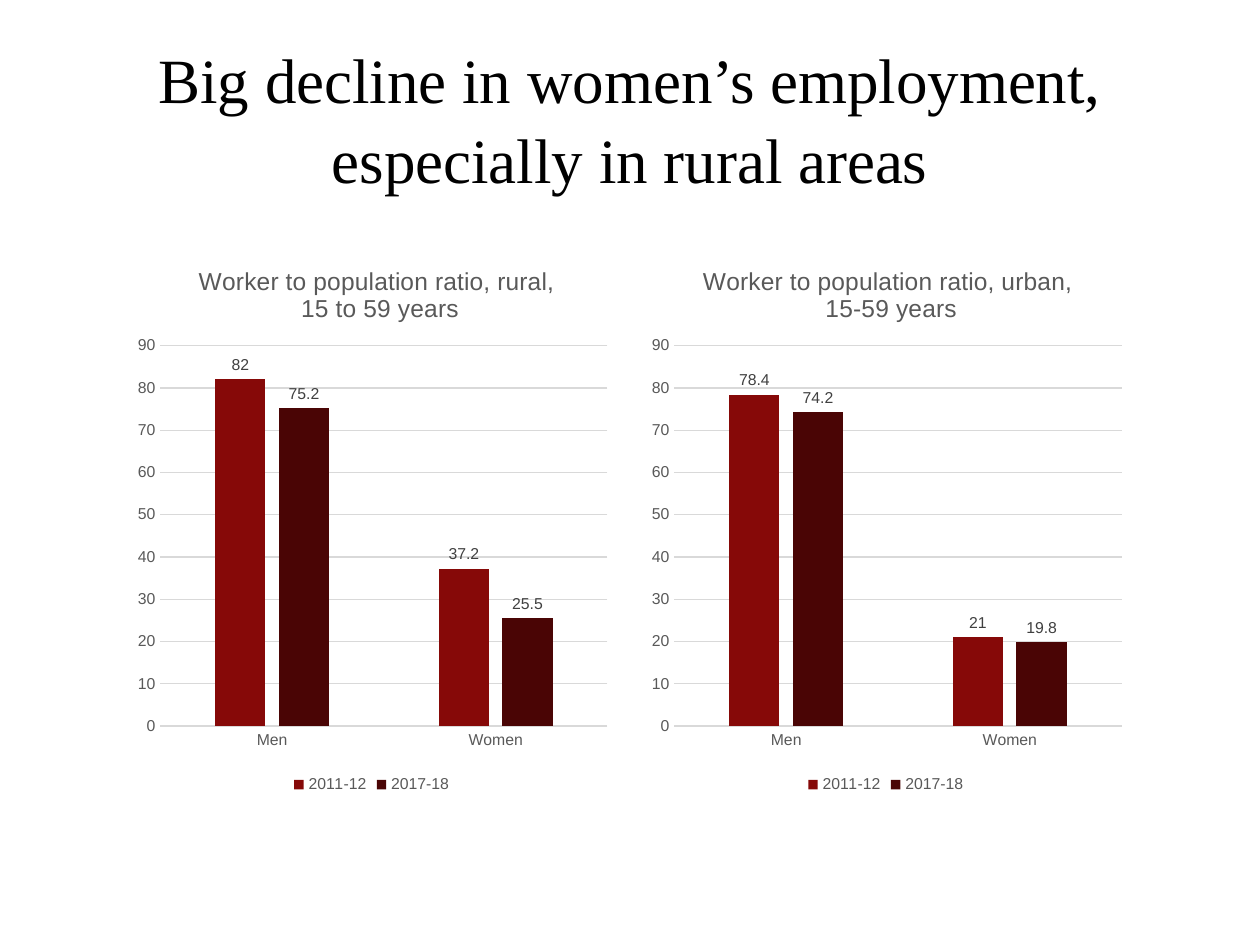
from lxml import etree
from pptx import Presentation
from pptx.chart.data import CategoryChartData
from pptx.dml.color import RGBColor
from pptx.enum.chart import XL_CHART_TYPE, XL_LABEL_POSITION, XL_LEGEND_POSITION, XL_TICK_MARK
from pptx.enum.text import MSO_ANCHOR, PP_ALIGN
from pptx.oxml.ns import qn
from pptx.util import Inches, Pt

COLUMNS = XL_CHART_TYPE.COLUMN_CLUSTERED
OUTSIDE_END = XL_LABEL_POSITION.OUTSIDE_END
BOTTOM = XL_LEGEND_POSITION.BOTTOM
NO_TICK = XL_TICK_MARK.NONE
MIDDLE = MSO_ANCHOR.MIDDLE
CENTER = PP_ALIGN.CENTER

COLORS = {"black": "000000", "gray": "595959", "label": "404040",
          "grid": "D9D9D9", "2011-12": "860908", "2017-18": "4A0505"}
CATEGORIES = ["Men", "Women"]

# Title lines, title left (share of chart width), values by year
CHARTS = [
    (["Worker to population ratio, rural, ", "15 to 59 years"], 0.14,
     {"2011-12": [82, 37.2], "2017-18": [75.2, 25.5]}),
    (["Worker to population ratio, urban, ", "15-59 years"], 0.12,
     {"2011-12": [78.4, 21], "2017-18": [74.2, 19.8]}),
]


def rgb(name):
    return RGBColor.from_string(COLORS[name])


def style_font(font, size, color, name="Arial"):
    font.size, font.name, font.bold = Pt(size), name, False
    font.color.rgb = rgb(color)


def add_text(slide, text, left, top, width, height, *, size, font, color):
    tf = slide.shapes.add_textbox(Inches(left), Inches(top), Inches(width), Inches(height)).text_frame
    tf.word_wrap = True
    tf.vertical_anchor = MIDDLE
    tf.margin_left = tf.margin_right = Inches(0.05)
    p = tf.paragraphs[0]
    p.alignment = CENTER
    p.line_spacing = 1.05
    r = p.add_run()
    r.text = text
    style_font(r.font, size, color, font)


def set_layout(parent, before, **position):
    """Place a chart part by shares of the chart size."""
    for old in parent.findall(qn("c:layout")):
        parent.remove(old)
    layout = etree.Element(qn("c:layout"))
    manual = etree.SubElement(layout, qn("c:manualLayout"))
    if "w" in position:
        etree.SubElement(manual, qn("c:layoutTarget")).set("val", "inner")
    for key in ("x", "y"):
        etree.SubElement(manual, qn(f"c:{key}Mode")).set("val", "edge")
    for key, value in position.items():
        etree.SubElement(manual, qn(f"c:{key}")).set("val", str(value))
    parent.insert(before, layout)


def add_title(chart, lines, left):
    title = chart.chart_title
    p = title.text_frame.paragraphs[0]
    for i, line in enumerate(lines):
        if i:
            p.add_line_break()
        r = p.add_run()
        r.text = line
        style_font(r.font, 14, "gray")
    set_layout(title._element, 1, x=left, y=0.04)
    title.include_in_layout = False


def style_axes(chart):
    for axis in (chart.category_axis, chart.value_axis):
        axis.major_tick_mark = axis.minor_tick_mark = NO_TICK
        style_font(axis.tick_labels.font, 9, "gray")
    values = chart.value_axis
    values.minimum_scale, values.maximum_scale, values.major_unit = 0, 90, 10
    values.format.line.fill.background()
    for line in (chart.category_axis.format.line, values.major_gridlines.format.line):
        line.color.rgb = rgb("grid")
        line.width = Pt(0.75)


def add_column_chart(slide, left, lines, title_left, values):
    data = CategoryChartData()
    data.categories = CATEGORIES
    for year, numbers in values.items():
        data.add_series(year, numbers)
    chart = slide.shapes.add_chart(COLUMNS, Inches(left), Inches(1.9),
                                   Inches(3.9), Inches(4.44), data).chart
    style_font(chart.font, 10, "black")
    add_title(chart, lines, title_left)
    style_axes(chart)

    # Columns and their values
    plot = chart.plots[0]
    plot.vary_by_categories = False
    plot.gap_width, plot.overlap = 219, -27
    for series in plot.series:
        series.format.fill.solid()
        series.format.fill.fore_color.rgb = rgb(series.name)
        labels = series.data_labels
        labels.show_value = True
        labels.position = OUTSIDE_END
        style_font(labels.font, 9, "label")
    plot_area = chart._chartSpace.chart.plotArea
    set_layout(plot_area, 0, x=0.07, y=0.19, w=0.91, h=0.68)

    # Legend
    chart.has_legend = True
    chart.legend.position = BOTTOM
    chart.legend.include_in_layout = False
    style_font(chart.legend.font, 9, "gray")


def main():
    prs = Presentation()
    prs.slide_width, prs.slide_height = Inches(10), Inches(7.5)
    slide = prs.slides.add_slide(prs.slide_layouts[6])

    # Heading
    add_text(slide, "Big decline in women’s employment, especially in rural areas",
             0.5, 0.1, 9, 1.65, size=36, font="Times New Roman", color="black")

    # Rural and urban charts side by side
    for i, (lines, title_left, values) in enumerate(CHARTS):
        add_column_chart(slide, 1 + 4.08 * i, lines, title_left, values)
    prs.save("out.pptx")


if __name__ == "__main__":
    main()
